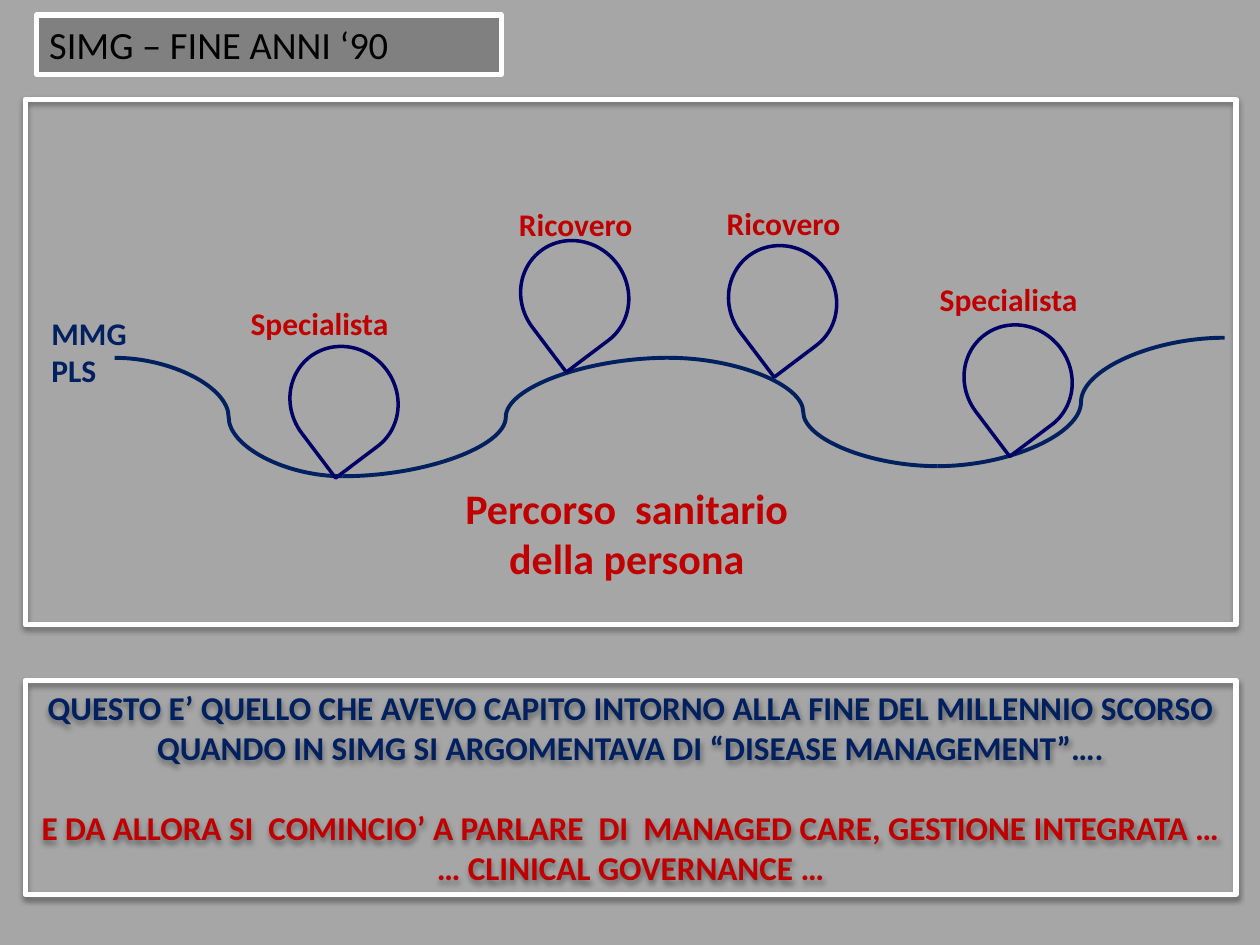
from itertools import pairwise

from lxml.etree import SubElement
from pptx import Presentation
from pptx.dml.color import RGBColor
from pptx.enum.shapes import MSO_CONNECTOR, MSO_SHAPE
from pptx.enum.text import MSO_ANCHOR, MSO_AUTO_SIZE, PP_ALIGN
from pptx.oxml.ns import qn
from pptx.util import Pt

COLORS = {
    "background": "A6A6A6",
    "title_fill": "808080",
    "title_text": "000000",
    "frame": "FFFFFF",
    "path": "002060",
    "episode": "000066",
    "accent": "C00000",
    "shadow": "000000",
}
FONT = "Calibri"


def color(name):
    """Return the named colour."""
    return RGBColor.from_string(COLORS[name])


def set_line(shape, name, width):
    """Give a shape or connector a solid line."""
    shape.line.color.rgb = color(name)
    shape.line.width = Pt(width)


def add_run(paragraph, text, size, name, bold=True):
    """Add one formatted run to a paragraph."""
    run = paragraph.add_run()
    run.text = text
    run.font.name = FONT
    run.font.size = Pt(size)
    run.font.bold = bold
    run.font.color.rgb = color(name)


def add_label(slide, box, lines, size, name, align=PP_ALIGN.LEFT):
    """Add a text box with one paragraph for each line."""
    label = slide.shapes.add_textbox(*map(Pt, box))
    frame = label.text_frame
    frame.word_wrap = True
    frame.auto_size = MSO_AUTO_SIZE.SHAPE_TO_FIT_TEXT
    for index, line in enumerate(lines):
        paragraph = frame.paragraphs[0] if index == 0 else frame.add_paragraph()
        paragraph.alignment = align
        add_run(paragraph, line, size, name)


def add_frame(slide, box):
    """Add an unfilled white frame with a soft shadow below it."""
    frame = slide.shapes.add_shape(MSO_SHAPE.RECTANGLE, *map(Pt, box))
    frame.fill.background()
    set_line(frame, "frame", 3)
    frame.shadow.inherit = False
    effects = frame.element.spPr.find(qn("a:effectLst"))
    shadow = SubElement(effects, qn("a:outerShdw"), blurRad=str(Pt(3.1)),
                        dist=str(Pt(1.6)), dir="5400000", rotWithShape="0")
    shade = SubElement(shadow, qn("a:srgbClr"), val=COLORS["shadow"])
    SubElement(shade, qn("a:alpha"), val="38000")
    return frame


def add_title(slide, box):
    """Place and format the title placeholder."""
    title = slide.shapes.title
    title.left, title.top, title.width, title.height = map(Pt, box)
    title.fill.solid()
    title.fill.fore_color.rgb = color("title_fill")
    set_line(title, "frame", 3)
    frame = title.text_frame
    frame.word_wrap = True
    frame.auto_size = MSO_AUTO_SIZE.NONE
    frame.vertical_anchor = MSO_ANCHOR.TOP
    paragraph = frame.paragraphs[0]
    paragraph.alignment = PP_ALIGN.LEFT
    add_run(paragraph, "SIMG – FINE ANNI ‘90", 22, "title_text", bold=False)


def add_care_path(slide, box):
    """Draw the winding care path with its episodes and labels."""
    left, top = box[:2]
    bends = [(51.1, 147.6), (181.4, 215.3), (367.9, 147.6), (521.3, 209.5), (685.4, 136.1)]
    for (x1, y1), (x2, y2) in pairwise(bends):
        curve = slide.shapes.add_connector(
            MSO_CONNECTOR.CURVE, Pt(left + x1), Pt(top + y1), Pt(left + x2), Pt(top + y2))
        set_line(curve, "path", 2.25)
        SubElement(curve.element.spPr, qn("a:effectLst"))

    episodes = [
        ("Specialista", (151.9, 140.4), (121.7, 113)),
        ("Ricovero", (283.7, 79.9), (275, 56.9)),
        ("Ricovero", (402.5, 82.8), (393.8, 56.1)),
        ("Specialista", (537.1, 128.1), (515.5, 99.3)),
    ]
    for text, (drop_x, drop_y), (label_x, label_y) in episodes:
        drop = slide.shapes.add_shape(
            MSO_SHAPE.TEAR, Pt(left + drop_x), Pt(top + drop_y), Pt(60.5), Pt(64.1))
        drop.rotation = 142.9
        drop.fill.background()
        set_line(drop, "episode", 2)
        drop.shadow.inherit = False
        add_label(slide, (left + label_x, top + label_y, 121.7, 29), [text], 18, "accent")

    add_label(slide, (left + 240.5, top + 215.3, 206.6, 65.5),
              ["Percorso  sanitario della persona"], 24, "accent", PP_ALIGN.CENTER)
    add_label(slide, (left + 7.9, top + 118.8, 121.7, 51.1), ["MMG", "PLS"], 18, "path")
    add_frame(slide, box)


def add_comment(slide, box):
    """Add the framed closing comment."""
    frame = add_frame(slide, box).text_frame
    frame.word_wrap = True
    frame.vertical_anchor = MSO_ANCHOR.MIDDLE
    lines = [
        ("QUESTO E’ QUELLO CHE AVEVO CAPITO INTORNO ALLA FINE DEL MILLENNIO SCORSO "
         "QUANDO IN SIMG SI ARGOMENTAVA DI “DISEASE MANAGEMENT”….", "path", 0),
        ("E DA ALLORA SI  COMINCIO’ A PARLARE  DI  MANAGED CARE, GESTIONE INTEGRATA …",
         "accent", 23),
        ("… CLINICAL GOVERNANCE …", "accent", 0),
    ]
    for index, (text, name, gap) in enumerate(lines):
        paragraph = frame.paragraphs[0] if index == 0 else frame.add_paragraph()
        paragraph.alignment = PP_ALIGN.CENTER
        paragraph.space_before = Pt(gap)
        add_run(paragraph, text, 19, name)


def main():
    """Build and save the presentation."""
    presentation = Presentation()
    presentation.slide_width, presentation.slide_height = Pt(720), Pt(540)
    slide = presentation.slides.add_slide(presentation.slide_layouts[5])
    slide.background.fill.solid()
    slide.background.fill.fore_color.rgb = color("background")
    add_title(slide, (20.9, 8.6, 265.7, 33.9))
    add_care_path(slide, (14.4, 56.9, 692, 300.2))
    add_comment(slide, (14.4, 388.8, 692, 122.4))
    presentation.save("out.pptx")


if __name__ == "__main__":
    main()
